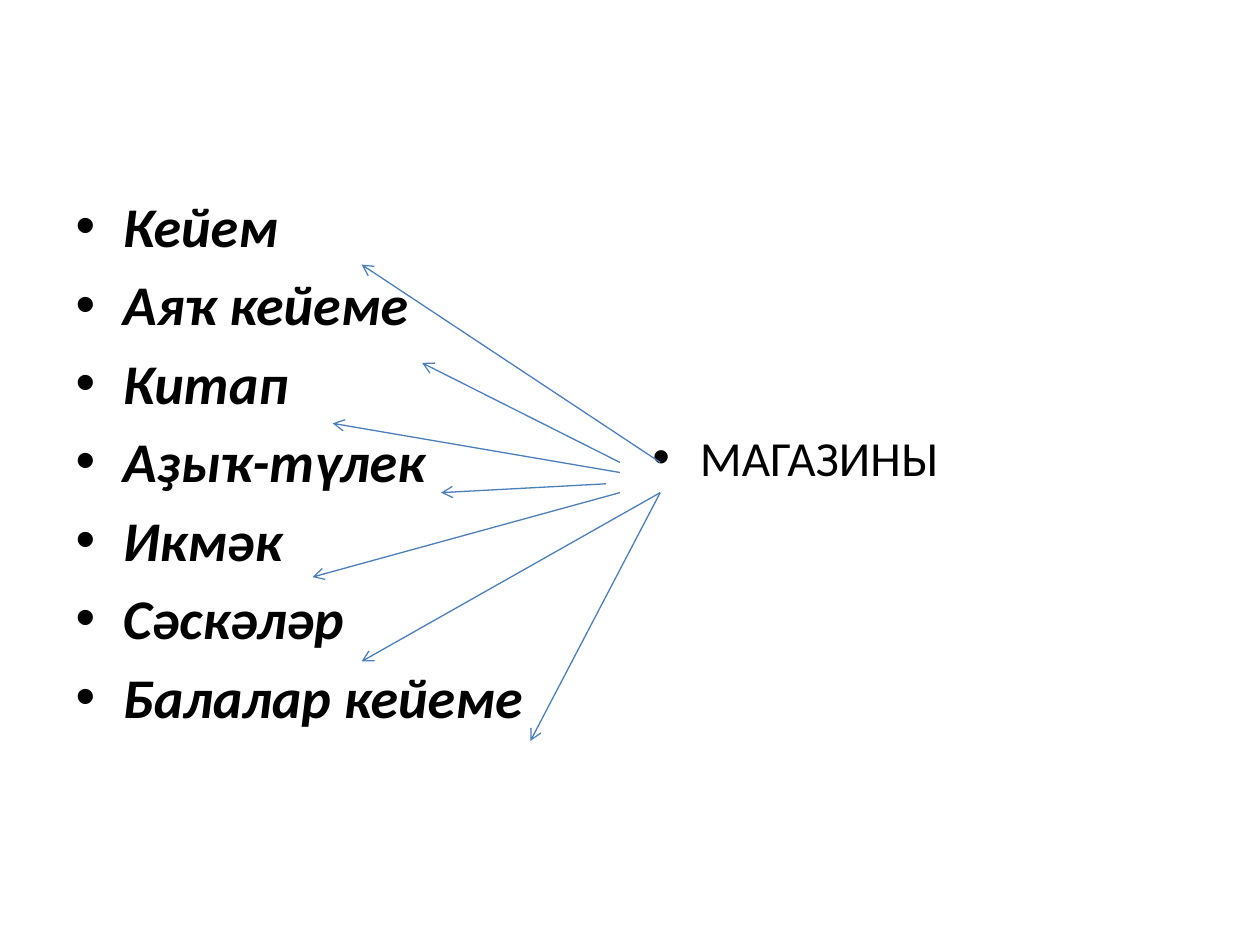
import pptx
import pptx.util
import pptx.dml.color
import pptx.enum.shapes
import pptx.enum.text
from lxml import etree
from pptx.oxml.ns import qn

Inches = pptx.util.Inches
BLACK = pptx.dml.color.RGBColor(0x00, 0x00, 0x00)
BLUE = pptx.dml.color.RGBColor(0x4B, 0x7E, 0xBC)
TWO_CONTENT_LAYOUT = 3

SHOP_KINDS = ["Кейем", "Аяҡ кейеме", "Китап", "Аҙыҡ-түлек",
              "Икмәк", "Сәскәләр", "Балалар кейеме"]
ARROWS = [
    ((5.24, 3.67), (2.87, 2.1)),
    ((5.24, 3.91), (4.21, 5.88)),
    ((5.24, 3.91), (2.87, 5.25)),
    ((4.92, 3.91), (2.48, 4.58)),
    ((4.81, 3.84), (3.5, 3.91)),
    ((4.92, 3.75), (2.64, 3.36)),
    ((4.92, 3.67), (3.35, 2.88)),
]


def write_text(para, text, size, bold=False, italic=False):
    """Add a formatted span of text to a paragraph."""
    span = para.add_run()
    span.text = text
    font = span.font
    font.name, font.size = "Calibri", pptx.util.Pt(size)
    font.bold, font.italic = bold, italic
    font.color.rgb = BLACK


def fill_list(holder, box, items, top_inset=0.05, **text_format):
    """Place a bulleted placeholder in its box and write its items."""
    holder.left, holder.top, holder.width, holder.height = map(Inches, box)
    frame = holder.text_frame
    frame.auto_size = pptx.enum.text.MSO_AUTO_SIZE.NONE
    frame.margin_top = Inches(top_inset)
    for index, item in enumerate(items):
        para = frame.add_paragraph() if index else frame.paragraphs[0]
        write_text(para, item, **text_format)


def add_arrow(page, start, end):
    """Draw a thin arrow from start to end."""
    arrow = page.shapes.add_connector(
        pptx.enum.shapes.MSO_CONNECTOR.STRAIGHT, *map(Inches, start + end))
    arrow.line.color.rgb = BLUE
    arrow.line.width = pptx.util.Pt(0.75)
    etree.SubElement(arrow.line._get_or_add_ln(), qn("a:tailEnd"), type="arrow")
    etree.SubElement(arrow._element.spPr, qn("a:effectLst"))


def main():
    """Build the slide that links the word for shop to its kinds."""
    deck = pptx.Presentation()
    deck.slide_width, deck.slide_height = Inches(10), Inches(7.5)
    page = deck.slides.add_slide(deck.slide_layouts[TWO_CONTENT_LAYOUT])
    title, kinds, shop = page.placeholders
    title._element.getparent().remove(title._element)

    fill_list(kinds, (0.5, 1.47, 4.42, 5.23), SHOP_KINDS,
              size=32, bold=True, italic=True)
    fill_list(shop, (5.08, 1.7, 4.42, 4.95), ["МАГАЗИНЫ"],
              top_inset=1.69, size=28)
    for start, end in ARROWS:
        add_arrow(page, start, end)
    deck.save("out.pptx")


if __name__ == "__main__":
    main()
